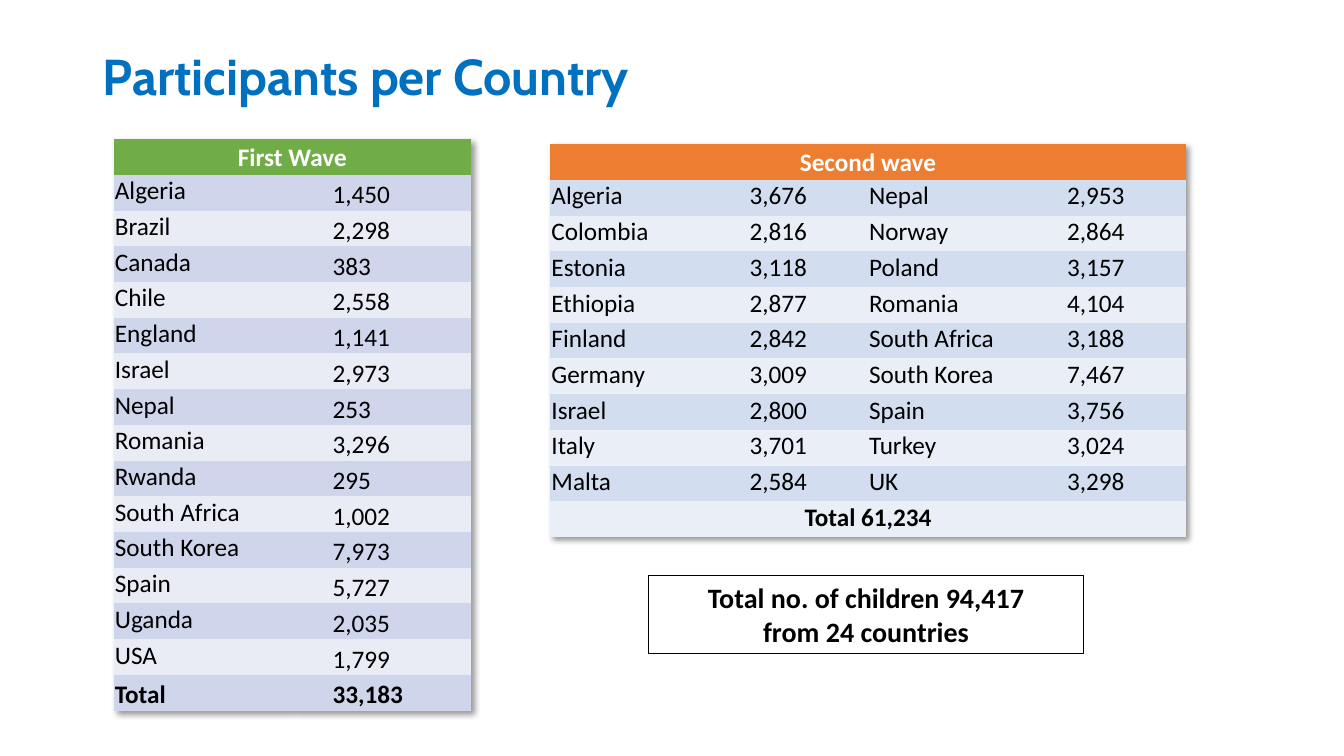
from dataclasses import dataclass

from lxml import etree
from pptx import Presentation
from pptx import util as u
from pptx.dml.color import RGBColor
from pptx.enum import shapes, text
from pptx.oxml import parse_xml

NO_STYLE = "{2D5ABB26-0587-4C30-8999-92F81FD0307C}"
SHADOW = (
    '<a:effectLst xmlns:a="http://schemas.openxmlformats.org/drawingml/2006/main">'
    '<a:outerShdw blurRad="50800" dist="38100" dir="2700000" algn="tl" rotWithShape="0">'
    '<a:prstClr val="black"><a:alpha val="40000"/></a:prstClr>'
    "</a:outerShdw></a:effectLst>"
)
TOP, MIDDLE, BOTTOM = (
    text.MSO_ANCHOR.TOP, text.MSO_ANCHOR.MIDDLE, text.MSO_ANCHOR.BOTTOM)
LEFT, CENTER = text.PP_ALIGN.LEFT, text.PP_ALIGN.CENTER


@dataclass
class Wave:
    heading: str
    left: float
    top: float
    width: float
    height: float
    heading_fill: str
    bands: tuple[str, str]
    value_anchor: text.MSO_ANCHOR
    rows: list[tuple[str, ...]]


FIRST = Wave(
    "First Wave", 1.13, 1.38, 3.54, 5.67, "70AD47", ("CFD5EA", "E9EBF5"), BOTTOM,
    [
        ("Algeria", "1,450"),
        ("Brazil", "2,298"),
        ("Canada", "383"),
        ("Chile", "2,558"),
        ("England", "1,141"),
        ("Israel", "2,973"),
        ("Nepal", "253"),
        ("Romania", "3,296"),
        ("Rwanda", "295"),
        ("South Africa", "1,002"),
        ("South Korea", "7,973"),
        ("Spain", "5,727"),
        ("Uganda", "2,035"),
        ("USA", "1,799"),
        ("Total", "33,183"),
    ],
)
SECOND = Wave(
    "Second wave", 5.46, 1.43, 6.3, 3.9, "ED7D31", ("D2DEEF", "EAEFF7"), TOP,
    [
        ("Algeria", "3,676", "Nepal", "2,953"),
        ("Colombia", "2,816", "Norway", "2,864"),
        ("Estonia", "3,118", "Poland", "3,157"),
        ("Ethiopia", "2,877", "Romania", "4,104"),
        ("Finland", "2,842", "South Africa", "3,188"),
        ("Germany", "3,009", "South Korea", "7,467"),
        ("Israel", "2,800", "Spain", "3,756"),
        ("Italy", "3,701", "Turkey", "3,024"),
        ("Malta", "2,584", "UK", "3,298"),
        ("Total 61,234",),
    ],
)


def rgb(color: str) -> RGBColor:
    return RGBColor.from_string(color)


def write(frame, content: str, *, size=18, font="Calibri", color="000000",
          bold=False, align=LEFT, indent=0.0, spacing=1.0) -> None:
    for number, line in enumerate(content.split("\n")):
        paragraph = frame.paragraphs[0] if number == 0 else frame.add_paragraph()
        paragraph.alignment = align
        paragraph.line_spacing = spacing
        if indent:
            paragraph._p.get_or_add_pPr().set("marL", str(u.Inches(indent)))
        run = paragraph.add_run()
        run.text = line
        run.font.size = u.Pt(size)
        run.font.name = font
        run.font.bold = bold
        run.font.color.rgb = rgb(color)


def fill_cell(cell, content: str, fill: str, anchor=TOP, **style) -> None:
    cell.margin_left = cell.margin_right = cell.margin_top = u.Inches(0.01)
    cell.margin_bottom = 0
    cell.vertical_anchor = anchor
    cell.fill.solid()
    cell.fill.fore_color.rgb = rgb(fill)
    write(cell.text_frame, content, **style)


def add_wave(slide, wave: Wave) -> None:
    row_count, column_count = len(wave.rows) + 1, len(wave.rows[0])
    table = slide.shapes.add_table(
        row_count, column_count, u.Inches(wave.left), u.Inches(wave.top),
        u.Inches(wave.width), u.Inches(wave.height)).table
    table.first_row = table.horz_banding = False
    properties = table._tbl.tblPr
    etree.SubElement(properties, properties[0].tag).text = NO_STYLE
    properties.remove(properties[0])
    properties.insert(0, parse_xml(SHADOW))
    for row in table.rows:
        row.height = u.Inches(wave.height / row_count)

    heading = table.cell(0, 0)
    heading.merge(table.cell(0, column_count - 1))
    fill_cell(heading, wave.heading, wave.heading_fill, MIDDLE,
              color="FFFFFF", bold=True, align=CENTER)
    for row, entries in enumerate(wave.rows, 1):
        band = wave.bands[(row - 1) % 2]
        is_total = entries[0].startswith("Total")
        if len(entries) == 1:
            total = table.cell(row, 0)
            total.merge(table.cell(row, column_count - 1))
            fill_cell(total, entries[0], band, bold=True, align=CENTER)
            continue
        for column, entry in enumerate(entries):
            is_value = column % 2 == 1
            fill_cell(table.cell(row, column), entry, band,
                      wave.value_anchor if is_value or is_total else TOP,
                      bold=is_total, indent=0.39 if is_value else 0)


def add_grand_total(slide) -> None:
    grand_total = slide.shapes.add_shape(
        shapes.MSO_SHAPE.RECTANGLE,
        u.Inches(6.43), u.Inches(5.71), u.Inches(4.32), u.Inches(0.77))
    grand_total.shadow.inherit = False
    grand_total.fill.solid()
    grand_total.fill.fore_color.rgb = rgb("FFFFFF")
    grand_total.line.color.rgb = rgb("000000")
    grand_total.line.width = u.Pt(0.75)
    grand_total.text_frame.word_wrap = True
    grand_total.text_frame.vertical_anchor = MIDDLE
    write(grand_total.text_frame, "Total no. of children 94,417\nfrom 24 countries",
          size=20, bold=True, align=CENTER)


def main() -> None:
    deck = Presentation()
    deck.slide_width, deck.slide_height = u.Inches(13.33), u.Inches(7.5)
    slide = deck.slides.add_slide(deck.slide_layouts[5])
    title = slide.shapes.title
    title.left, title.top = u.Inches(0.92), u.Inches(0.32)
    title.width, title.height = u.Inches(9.38), u.Inches(0.94)
    title.text_frame.vertical_anchor = MIDDLE
    title.text_frame.auto_size = text.MSO_AUTO_SIZE.NONE
    write(title.text_frame, "Participants per Country", size=36, font="Cabin",
          color="0070C0", bold=True, spacing=0.9)
    for wave in (FIRST, SECOND):
        add_wave(slide, wave)
    add_grand_total(slide)
    deck.save("out.pptx")


if __name__ == "__main__":
    main()
